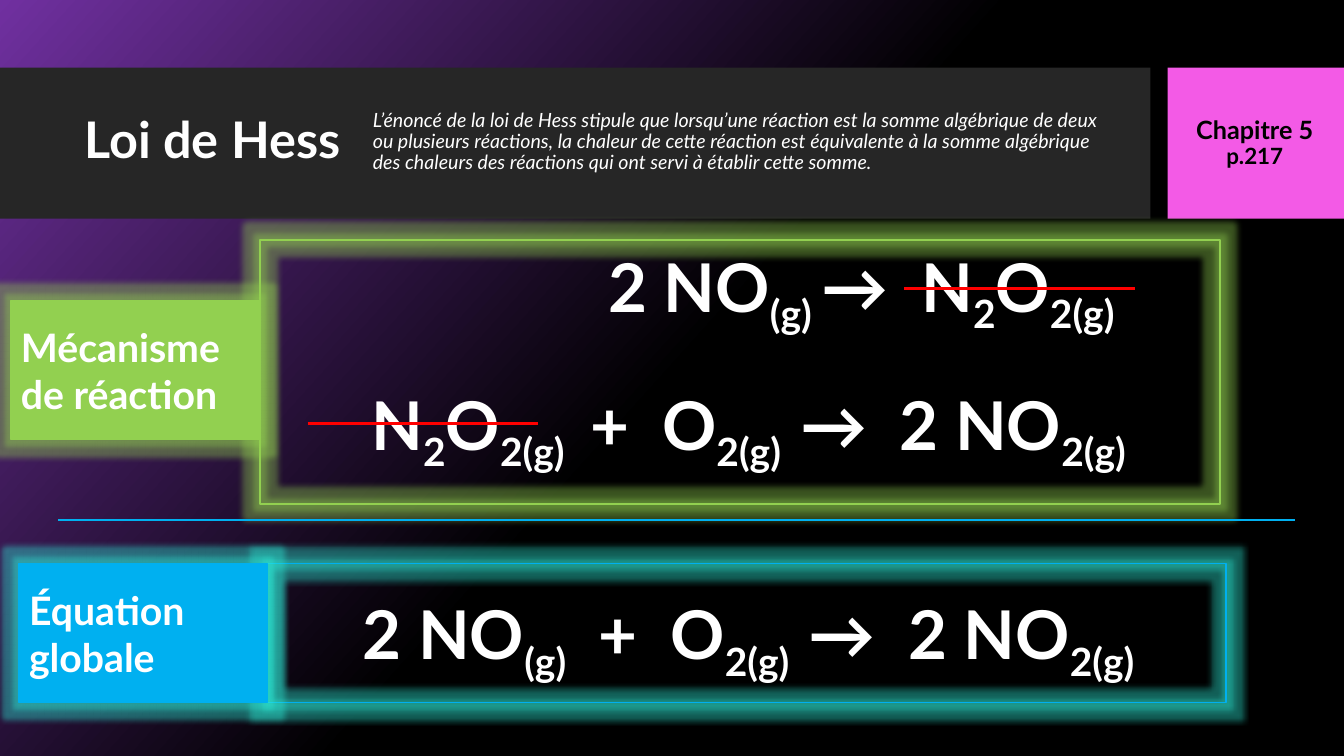
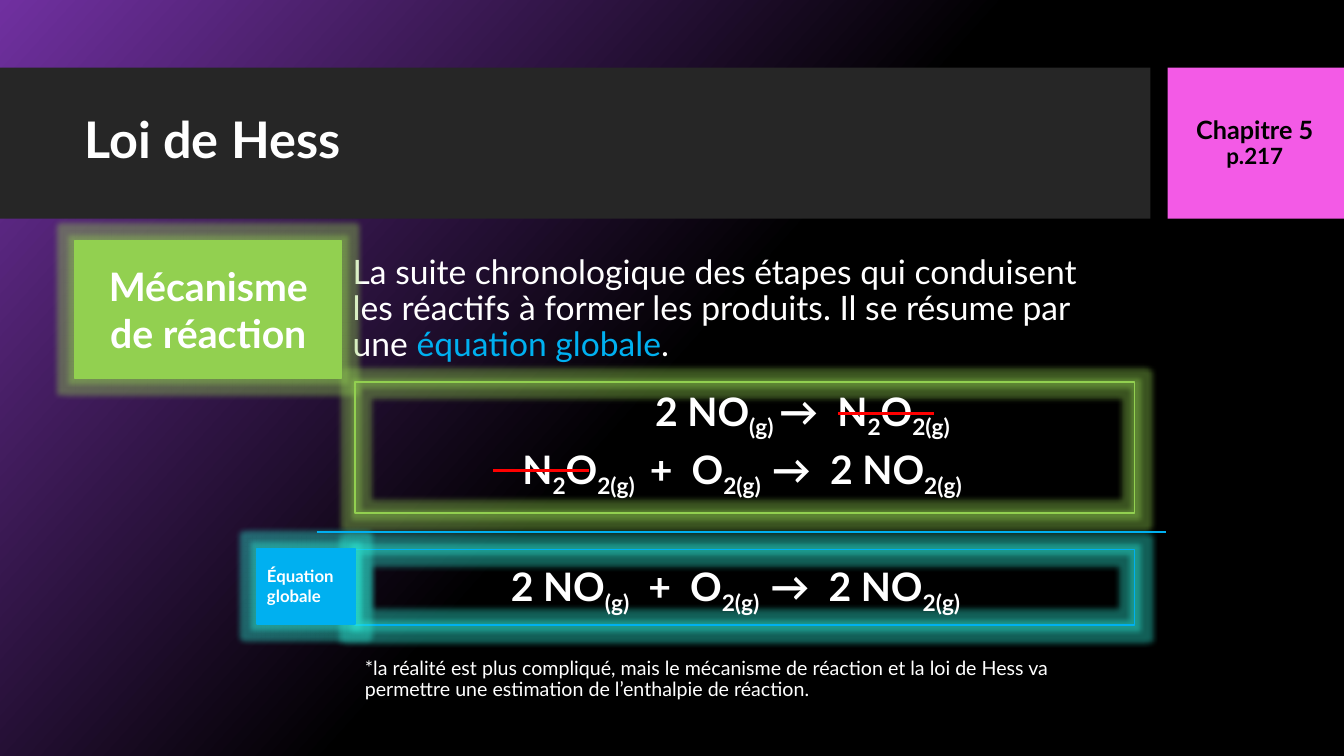
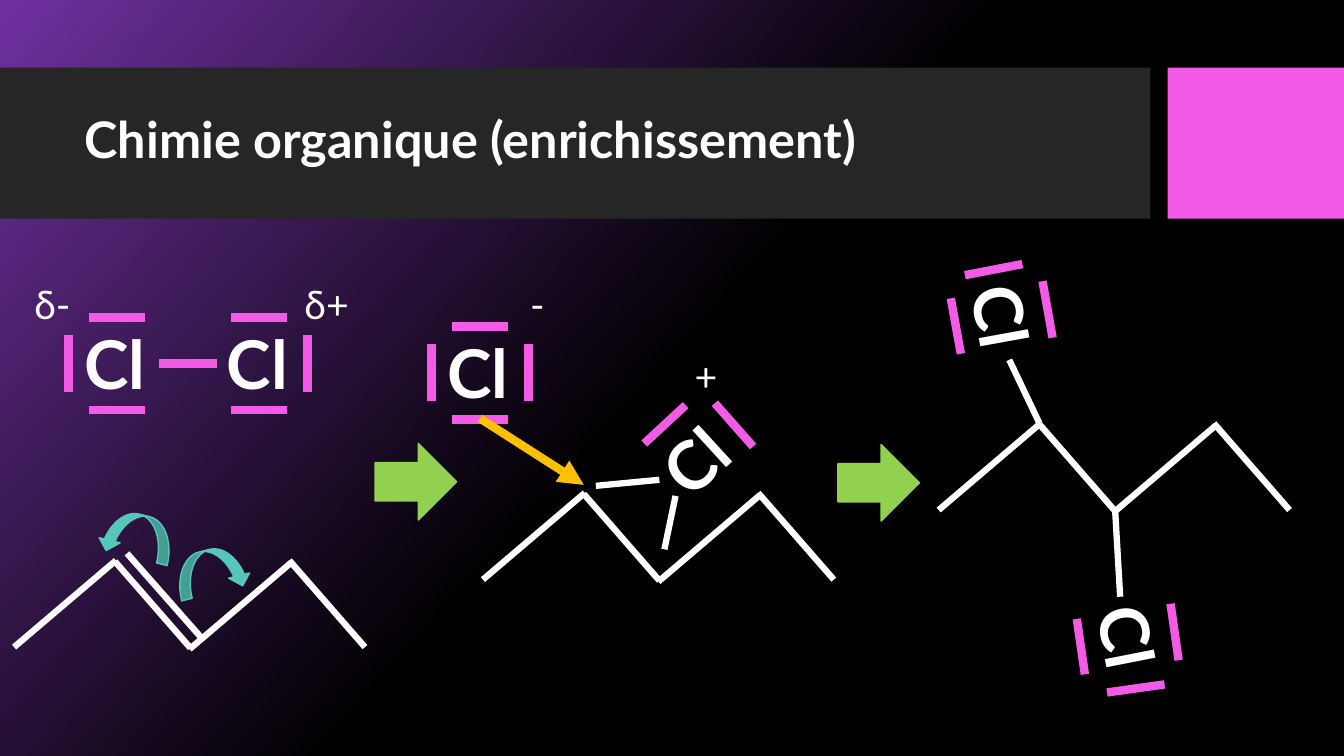
from pptx import Presentation
from pptx.dml.color import RGBColor
from pptx.enum import shapes, text
from pptx.oxml import ns, xmlchemy
from pptx.util import Inches, Pt
from lxml import etree


class Theme:
    font = "Lato"
    white, black, dark = "FFFFFF", "000000", "262626"
    purple, pink, red, gold = "7030A0", "F35AE6", "FF0000", "FFC000"
    green, blue, teal, aqua = "92D050", "00B0F0", "55C6BA", "2DEEDA"
    title, huge, large, body, head, page, note, tiny = 36, 48, 28, 24, 18, 16, 14, 12
    thin, rule, strike, bond, pair = 1, 1.5, 2.25, 4.5, 6
    glow = 0.11


RECT = shapes.MSO_SHAPE.RECTANGLE
LEFT, MID = text.PP_ALIGN.LEFT, text.PP_ALIGN.CENTER
TOP, CENTRE = text.MSO_ANCHOR.TOP, text.MSO_ANCHOR.MIDDLE


def box(slide, at, words="", size=Theme.large, kind=None, fill=None, line=None,
        glow=None, color=Theme.white, bold=True, italic=False, align=LEFT,
        anchor=TOP, lead=1.0, alt=None, turn=0):
    """Add a shape, or a text box if kind is None.

    Underscores in words enclose runs that are coloured alt, or subscript without it.
    """
    place = [Inches(n) for n in at]
    if kind is None:
        shape = slide.shapes.add_textbox(*place)
    else:
        shape = slide.shapes.add_shape(kind, *place)
        shape.shadow.inherit = False
        if fill:
            shape.fill.solid()
            shape.fill.fore_color.rgb = RGBColor.from_string(fill)
        else:
            shape.fill.background()
        if line:
            shape.line.color.rgb = RGBColor.from_string(line)
            shape.line.width = Pt(Theme.thin)
        else:
            shape.line.fill.background()
        if glow:
            halo = etree.SubElement(shape._element.spPr.find(ns.qn("a:effectLst")),
                                    ns.qn("a:glow"), rad=str(Inches(Theme.glow)))
            tint = etree.SubElement(halo, ns.qn("a:srgbClr"), val=glow)
            etree.SubElement(tint, ns.qn("a:alpha"), val="40000")
    shape.rotation = turn
    if not words:
        return shape
    frame = shape.text_frame
    frame.word_wrap = True
    frame.vertical_anchor = anchor
    for n, row in enumerate(words.split("\n")):
        para = frame.add_paragraph() if n else frame.paragraphs[0]
        para.alignment, para.line_spacing = align, lead
        for k, part in enumerate(row.split("_")):
            if not part:
                continue
            run = para.add_run()
            run.text = part
            font = run.font
            font.name, font.size = Theme.font, Pt(size)
            font.bold, font.italic = bold, italic
            font.color.rgb = RGBColor.from_string(alt if k % 2 and alt else color)
            if k % 2 and not alt:
                run._r.get_or_add_rPr().set("baseline", "-25000")
    return shape


def stroke(slide, ends, color, width):
    link = slide.shapes.add_connector(shapes.MSO_CONNECTOR.STRAIGHT,
                                      *[Inches(n) for n in ends])
    link.line.color.rgb = RGBColor.from_string(color)
    link.line.width = Pt(width)
    etree.SubElement(link._element.spPr, ns.qn("a:effectLst"))
    return link


deck = Presentation()
deck.slide_width, deck.slide_height = Inches(13.33), Inches(7.5)

# Shared background, bands and titles
back = deck.slide_master.background.fill
back.gradient()
back.gradient_angle = 318
for stop, tone, pos in zip(back.gradient_stops, (Theme.purple, Theme.black), (0, 0.5)):
    stop.color.rgb = RGBColor.from_string(tone)
    stop.position = pos

pages = []
for title, mark in (("Loi de Hess", "Chapitre 5\np.217"),
                    ("Loi de Hess", "Chapitre 5\np.217"),
                    ("Chimie organique (enrichissement)", "")):
    page = deck.slides.add_slide(deck.slide_layouts[6])
    box(page, (0, 0.67, 11.41, 1.5), kind=RECT, fill=Theme.dark)
    box(page, (11.58, 0.67, 1.75, 1.5), kind=RECT, fill=Theme.pink)
    box(page, (0.74, 0.82, 10.51, 1.18), title, Theme.title, anchor=CENTRE, lead=0.9)
    if mark:
        tag = box(page, (11.56, 0.67, 1.77, 1.51), mark, Theme.head, color=Theme.black,
                  align=MID, anchor=CENTRE, lead=0.9)
        tag.text_frame.paragraphs[1].runs[0].font.size = Pt(Theme.page)
    pages.append(page)
law, steps, chem = pages

# Hess's law: statement, definition and note
box(law, (3.6, 0.82, 7.56, 1.18),
    "L’énoncé de la loi de Hess stipule que lorsqu’une réaction est la somme algébrique "
    "de deux ou plusieurs réactions, la chaleur de cette réaction est équivalente à la "
    "somme algébrique des chaleurs des réactions qui ont servi à établir cette somme.",
    Theme.note, bold=False, italic=True, anchor=CENTRE, lead=0.9)
box(steps, (3.4, 2.39, 7.86, 1.36),
    "La suite chronologique des étapes qui conduisent les réactifs à former les produits. "
    "Il se résume par une _équation globale_.",
    Theme.body, bold=False, anchor=CENTRE, lead=0.9, alt=Theme.blue)
box(steps, (3.52, 6.37, 7.73, 0.75),
    "*la réalité est plus compliqué, mais le mécanisme de réaction et la loi de Hess va "
    "permettre une estimation de l’enthalpie de réaction.",
    Theme.note, bold=False, anchor=CENTRE, lead=0.9)

# Hess's law: mechanism and overall equation
sums = ("2 NO_(g)_  +  O_2(g)  _→  2 NO_2(g)_",
        "2 NO_(g) _→  N_2_O_2(g)_",
        "N_2_O_2(g) _ +  O_2(g)  _→  2 NO_2(g)_")
names = ("Équation globale", "Mécanisme de réaction")
hues = ((Theme.blue, Theme.aqua), (Theme.green, Theme.green))
plans = (
    (law, Theme.huge,
     ((2.64, 5.59, 9.52, 1.38), (2.58, 2.38, 9.52, 2.62)),
     (((0.19, 5.59, 2.46, 1.38), Theme.large, LEFT),
      ((0.11, 2.98, 2.46, 1.38), Theme.large, LEFT)),
     ((3.14, 5.83, 8.57, 0.91), (4.93, 2.38, 7.23, 0.91), (3.14, 3.75, 8.57, 0.91)),
     (0.58, 5.16, 12.84, 5.16),
     ((8.97, 2.86, 11.26, 2.86), (3.05, 4.2, 5.34, 4.2))),
    (steps, Theme.large,
     ((3.52, 5.45, 7.73, 0.75), (3.52, 3.79, 7.73, 1.3)),
     (((2.55, 5.44, 0.97, 0.75), Theme.tiny, LEFT),
      ((0.74, 2.39, 2.65, 1.36), Theme.large, MID)),
     ((3.52, 5.53, 7.55, 0.57), (5.64, 3.79, 4.64, 0.57), (3.65, 4.37, 7.42, 0.57)),
     (3.14, 5.28, 11.56, 5.28),
     ((8.31, 4.1, 9.26, 4.1), (4.89, 4.67, 5.84, 4.67))),
)
for page, size, frames, tags, spots, rule, cuts in plans:
    for at, (spot, small, side), name, (hue, halo) in zip(frames, tags, names, hues):
        box(page, at, kind=RECT, line=hue, glow=halo)
        box(page, spot, name, small, RECT, hue, hue, halo, align=side, anchor=CENTRE)
    stroke(page, rule, Theme.blue, Theme.rule)
    for at, words in zip(spots, sums):
        box(page, at, words, size, align=MID)
    for cut in cuts:
        stroke(page, cut, Theme.red, Theme.strike)

# Organic chemistry: carbon chains, then the other bonds
chain = ((0, 0, 1.01, -0.86), (1, -0.85, 1.75, 0.01),
         (1.74, 0.02, 2.75, -0.84), (2.73, -0.86, 3.48, 0))
for x, y in ((0.14, 6.42), (4.79, 5.75), (9.31, 5.06)):
    for a, b, c, d in chain:
        stroke(chem, (x + a, y + b, x + c, y + d), Theme.white, Theme.bond)
for ends in ((1.26, 5.49, 2, 6.33), (5.91, 4.82, 6.54, 4.76), (6.59, 5.45, 6.7, 4.92),
             (10.31, 4.2, 10.01, 3.57), (11.06, 5.06, 11.11, 5.92)):
    stroke(chem, ends, Theme.white, Theme.bond)

# Upright chlorine atoms with their electron pairs
pairs = {"top": (0.14, 0, 0.7, 0), "base": (0.14, 0.92, 0.7, 0.92),
         "left": (-0.06, 0.17, -0.06, 0.74), "right": (0.9, 0.17, 0.9, 0.74)}
atoms = []
for x, y, sides in ((0.74, 3.15, ("top", "base", "left")),
                    (2.15, 3.15, ("top", "base", "right")),
                    (4.34, 3.24, pairs)):
    atoms.append(box(chem, (x, y, 0.84, 0.91), "Cl", Theme.huge))
    for side in sides:
        a, b, c, d = pairs[side]
        stroke(chem, (x + a, y + b, x + c, y + d), Theme.pink, Theme.pair)
bond = stroke(chem, (1.58, 3.61, 2.15, 3.61), Theme.pink, Theme.pair)
bond.begin_connect(atoms[0], 3)
bond.end_connect(atoms[1], 1)

# Turned chlorine atoms with their electron pairs
for x, y, turn in ((6.49, 4.1, 317.5), (10.77, 5.88, 78.9), (9.52, 2.7, 79.8)):
    box(chem, (x, y, 0.84, 0.91), "Cl", Theme.huge, turn=turn)
for ends in ((6.39, 4.4, 6.8, 4.02), (7.09, 4, 7.47, 4.43),
             (11.61, 5.99, 11.69, 6.55), (11.55, 6.79, 10.98, 6.87),
             (10.68, 6.14, 10.76, 6.69), (10.34, 2.79, 10.44, 3.35),
             (10.14, 2.62, 9.57, 2.73), (9.43, 2.96, 9.53, 3.51)):
    stroke(chem, ends, Theme.pink, Theme.pair)

# Charges
for x, y, wide, sign in ((0.04, 2.73, 0.96, "δ-"), (2.76, 2.73, 0.96, "δ+"),
                         (6.79, 3.45, 0.39, "+"), (5.05, 2.73, 0.56, "-")):
    box(chem, (x, y, wide, 0.57), sign, bold=False, align=MID)

# Arrows
for x, y, turn, flip in ((1.74, 5.45, 346.1, False), (0.99, 5.1, 13.9, True)):
    curl = box(chem, (x, y, 0.73, 0.43), kind=shapes.MSO_SHAPE.CURVED_DOWN_ARROW,
               fill=Theme.teal, line=Theme.teal, turn=turn)
    if flip:
        curl._element.spPr.get_or_add_xfrm().set("flipH", "1")
for x, y in ((3.72, 4.4), (8.31, 4.41)):
    box(chem, (x, y, 0.81, 0.76), kind=shapes.MSO_SHAPE.RIGHT_ARROW,
        fill=Theme.green, line=Theme.green)
attack = stroke(chem, (4.76, 4.15, 5.79, 4.81), Theme.gold, Theme.pair)
attack.begin_connect(atoms[2], 2)
etree.SubElement(attack.line._get_or_add_ln(), ns.qn("a:tailEnd"), type="triangle")

deck.save("out.pptx")
